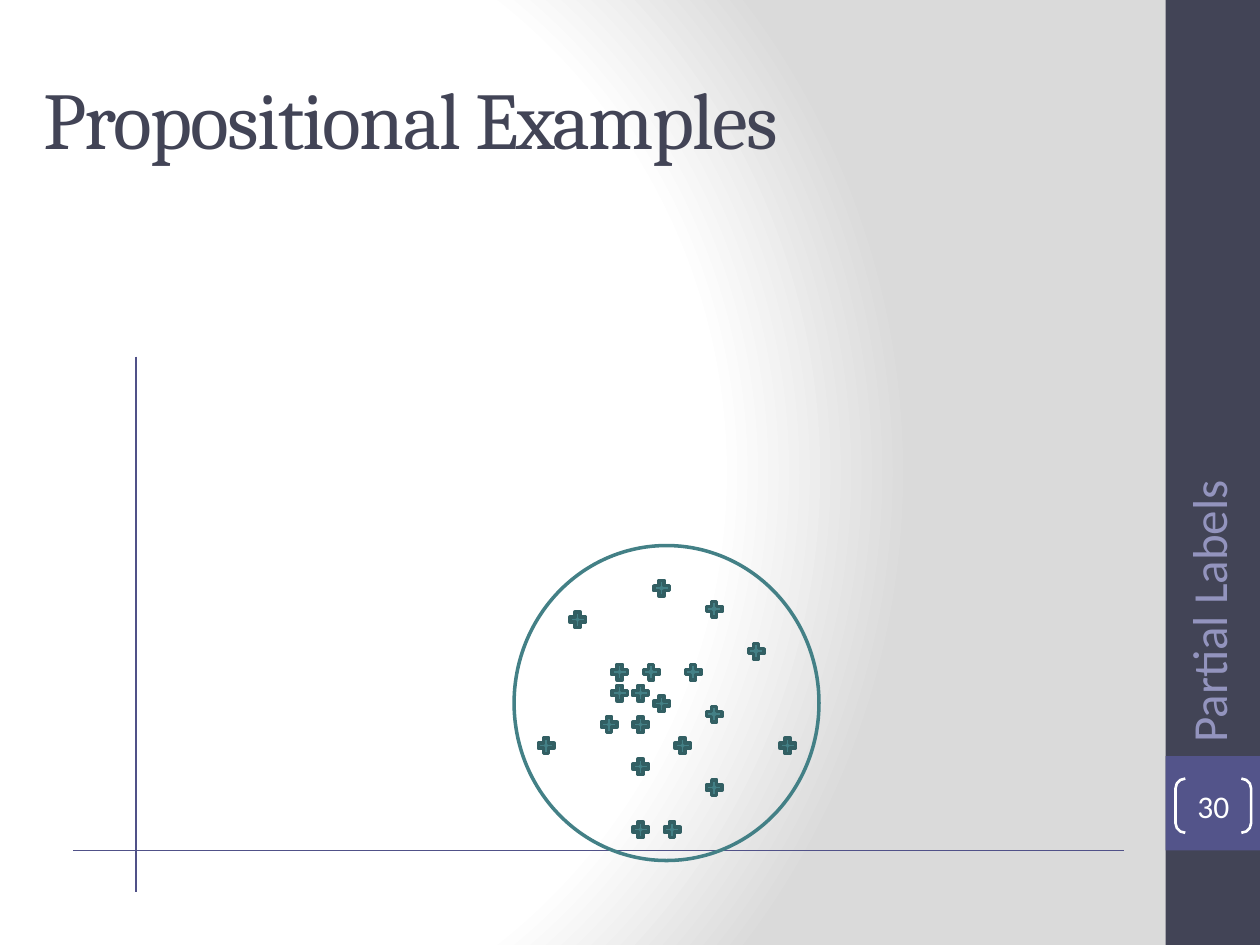
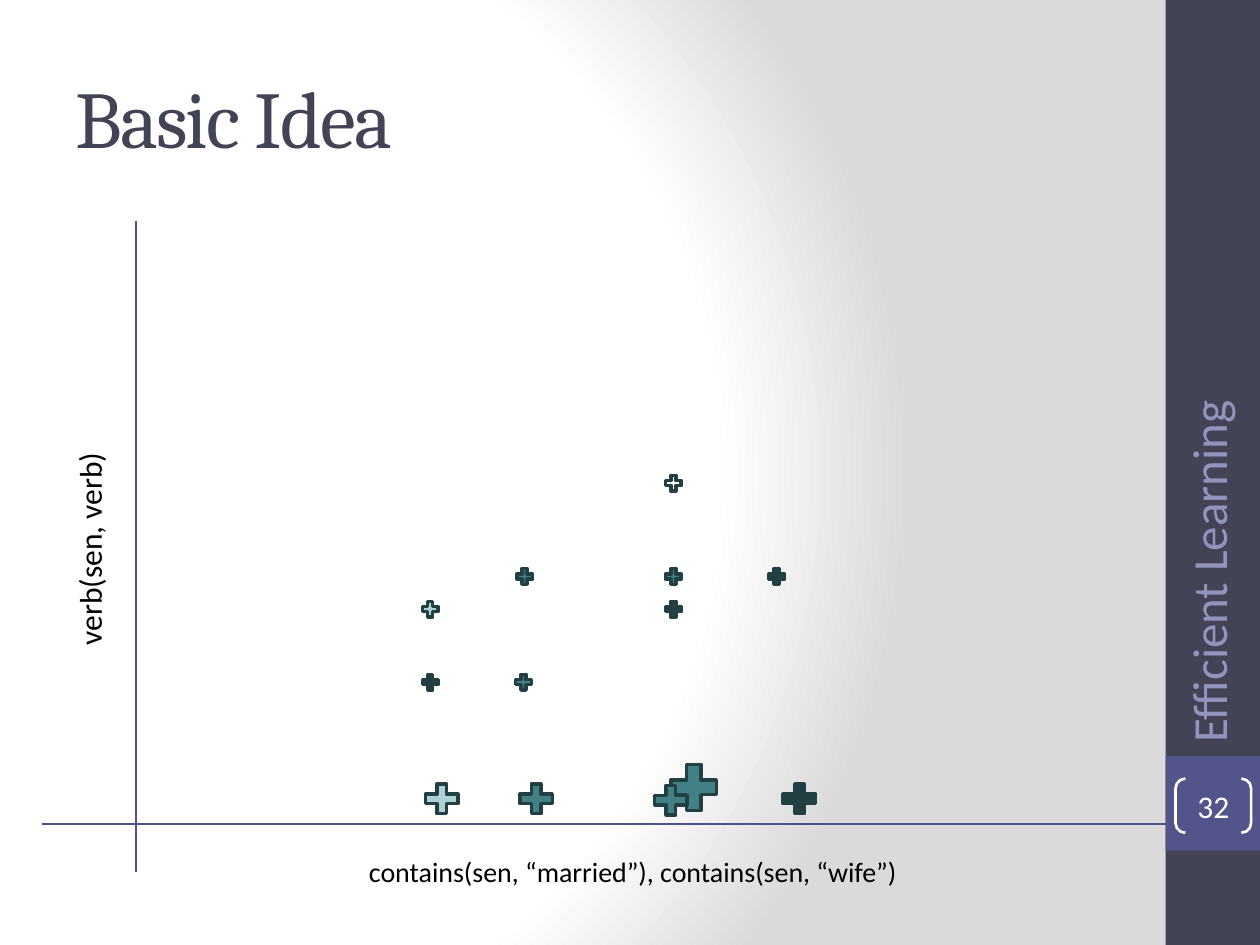
from dataclasses import dataclass

from lxml import etree
from pptx import Presentation
from pptx.dml.color import RGBColor
from pptx.enum import shapes, text
from pptx.oxml import ns, parse_xml
from pptx.util import Inches, Pt

COLORS = {
    "band": "424456",
    "page_block": "53548A",
    "axis": "505188",
    "section": "9394BE",
    "teal": "438086",
    "teal_edge": "325F63",
    "dark_teal": "224043",
    "pale_teal": "ADD2D6",
    "white": "FFFFFF",
    "grey": "DADADA",
    "black": "000000",
}
BODY_FONT, TITLE_FONT = "Calibri", "Cambria"
GRID = 12  # grid steps per inch in the example cluster
SMALL = (0.17, 0.17)
MEDIUM = (0.35, 0.32)
LARGE = (0.49, 0.5)


@dataclass
class Box:
    left: float
    top: float
    width: float
    height: float

    def lengths(self):
        return [Inches(v) for v in (self.left, self.top, self.width, self.height)]


@dataclass
class Label:
    wording: str
    box: Box
    size: int
    color: str = "black"
    font: str = BODY_FONT
    rotation: int = 0


@dataclass
class Example:
    left: float
    top: float
    size: tuple = SMALL
    fill: str = "teal"


@dataclass
class Axis:
    start: tuple
    end: tuple


# Grid column and row of each example in the cluster
CLUSTER = [
    (58, 63), (60, 65), (58, 65), (61, 63), (60, 68), (62, 66), (57, 68),
    (60, 72), (64, 70), (74, 70), (65, 63), (67, 67), (71, 61), (67, 74),
    (62, 55), (54, 58), (51, 70), (60, 78), (67, 57), (63, 78),
]
WEIGHTED_EXAMPLES = [
    Example(4.08, 6.18, MEDIUM),
    Example(3.33, 6.18, MEDIUM, "pale_teal"),
    Example(6.17, 6.18, MEDIUM, "dark_teal"),
    Example(5.26, 4.49),
    Example(4.08, 4.49),
    Example(3.33, 4.75, fill="pale_teal"),
    Example(4.07, 5.33),
    Example(5.26, 4.75, fill="dark_teal"),
    Example(6.08, 4.49, fill="dark_teal"),
    Example(3.33, 5.33, fill="dark_teal"),
    Example(5.26, 3.75, fill="white"),
    Example(5.15, 6.19, MEDIUM),
]


def rgb(color: str) -> RGBColor:
    return RGBColor.from_string(COLORS[color])


def set_background(slide) -> None:
    """Radial fade from white at the left to grey at the right."""
    stops = "".join(
        f'<a:gs pos="{share * 1000}"><a:srgbClr val="{COLORS[color]}"/></a:gs>'
        for share, color in ((0, "white"), (75, "white"), (100, "grey"))
    )
    background = parse_xml(
        f'<p:bg {ns.nsdecls("p", "a")}><p:bgPr><a:gradFill rotWithShape="1">'
        f'<a:gsLst>{stops}</a:gsLst><a:path path="circle">'
        '<a:fillToRect l="20000" t="50000" r="100000" b="50000"/></a:path>'
        "</a:gradFill><a:effectLst/></p:bgPr></p:bg>"
    )
    slide.shapes._spTree.addprevious(background)


def add_figure(slide, kind, box: Box, fill: str = "", line: str = "", width: float = 2):
    figure = slide.shapes.add_shape(kind, *box.lengths())
    figure.shadow.inherit = False
    if fill:
        figure.fill.solid()
        figure.fill.fore_color.rgb = rgb(fill)
    else:
        figure.fill.background()
    if line:
        figure.line.color.rgb = rgb(line)
        figure.line.width = Pt(width)
    else:
        figure.line.fill.background()
    return figure


def write(frame, wording: str, size: int, color: str, font: str):
    paragraph = frame.paragraphs[0]
    run = paragraph.add_run()
    run.text = wording
    paragraph.font.size = Pt(size)
    paragraph.font.name = font
    paragraph.font.color.rgb = rgb(color)
    return paragraph


def add_label(slide, label: Label):
    box = slide.shapes.add_textbox(*label.box.lengths())
    box.rotation = label.rotation
    box.text_frame.word_wrap = True
    write(box.text_frame, label.wording, label.size, label.color, label.font)
    return box


def add_title(slide, wording: str, box: Box) -> None:
    title = add_label(slide, Label(wording, box, 46, "band", TITLE_FONT))
    title.text_frame.vertical_anchor = text.MSO_ANCHOR.MIDDLE
    run = title.text_frame.paragraphs[0].runs[0]
    run._r.get_or_add_rPr().set("spc", "-100")


def add_axis(slide, axis: Axis) -> None:
    ends = [Inches(v) for v in (*axis.start, *axis.end)]
    line = slide.shapes.add_connector(shapes.MSO_CONNECTOR.STRAIGHT, *ends)
    line.line.color.rgb = rgb("axis")
    line.line.width = Pt(1)
    etree.SubElement(line._element.spPr, ns.qn("a:effectLst"))


def add_example(slide, example: Example, edge: str) -> None:
    box = Box(example.left, example.top, *example.size)
    add_figure(slide, shapes.MSO_SHAPE.MATH_PLUS, box, example.fill, edge)


def start_slide(deck, title: str, title_box: Box, section: str, page: int):
    """Blank slide with background, side band, title, section and page number."""
    slide = deck.slides.add_slide(deck.slide_layouts[6])
    set_background(slide)
    rectangle = shapes.MSO_SHAPE.RECTANGLE
    add_figure(slide, rectangle, Box(9.25, 0, 0.75, 7.5), "band")
    add_figure(slide, rectangle, Box(9.25, 6, 0.75, 0.75), "page_block")
    add_title(slide, title, title_box)
    section_box = Box(7.61, 3.73, 3.95, 0.57)
    add_label(slide, Label(section, section_box, 28, "section", rotation=270))

    bracket = add_figure(slide, shapes.MSO_SHAPE.DOUBLE_BRACKET,
                         Box(9.33, 6.18, 0.6, 0.43), line="white", width=1.5)
    bracket.adjustments[0] = 0.18
    frame = bracket.text_frame
    frame.margin_left = frame.margin_right = frame.margin_top = frame.margin_bottom = 0
    frame.vertical_anchor = text.MSO_ANCHOR.MIDDLE
    number = write(frame, str(page), 18, "white", BODY_FONT)
    number.alignment = text.PP_ALIGN.CENTER
    return slide


def build_propositional_examples(deck) -> None:
    slide = start_slide(deck, "Propositional Examples", Box(0.25, 0.25, 9.5, 1.37),
                        "Partial Labels", 30)
    add_axis(slide, Axis((1.08, 2.83), (1.08, 7.08)))
    add_axis(slide, Axis((0.58, 6.75), (8.92, 6.75)))
    for column, row in CLUSTER:
        add_example(slide, Example(column / GRID, row / GRID), "teal_edge")
    add_figure(slide, shapes.MSO_SHAPE.OVAL, Box(4.08, 4.33, 2.42, 2.5), line="teal")


def build_basic_idea(deck) -> None:
    slide = start_slide(deck, "Basic Idea", Box(0.5, 0.3, 8.33, 1.25),
                        "Efficient Learning", 32)
    add_example(slide, Example(5.26, 6, LARGE), "dark_teal")
    add_axis(slide, Axis((0.33, 6.54), (9.25, 6.54)))
    add_axis(slide, Axis((1.08, 1.75), (1.08, 6.92)))
    for example in WEIGHTED_EXAMPLES:
        add_example(slide, example, "dark_teal")
    add_label(slide, Label("contains(sen, “married”), contains(sen, “wife”)",
                           Box(2.83, 6.73, 5.58, 0.37), 16))
    add_label(slide, Label("verb(sen, verb)", Box(-0.84, 3.47, 3.1, 0.4), 18,
                           rotation=270))


def main() -> None:
    deck = Presentation()
    deck.slide_width, deck.slide_height = Inches(10), Inches(7.5)
    build_propositional_examples(deck)
    build_basic_idea(deck)
    deck.save("out.pptx")


if __name__ == "__main__":
    main()
